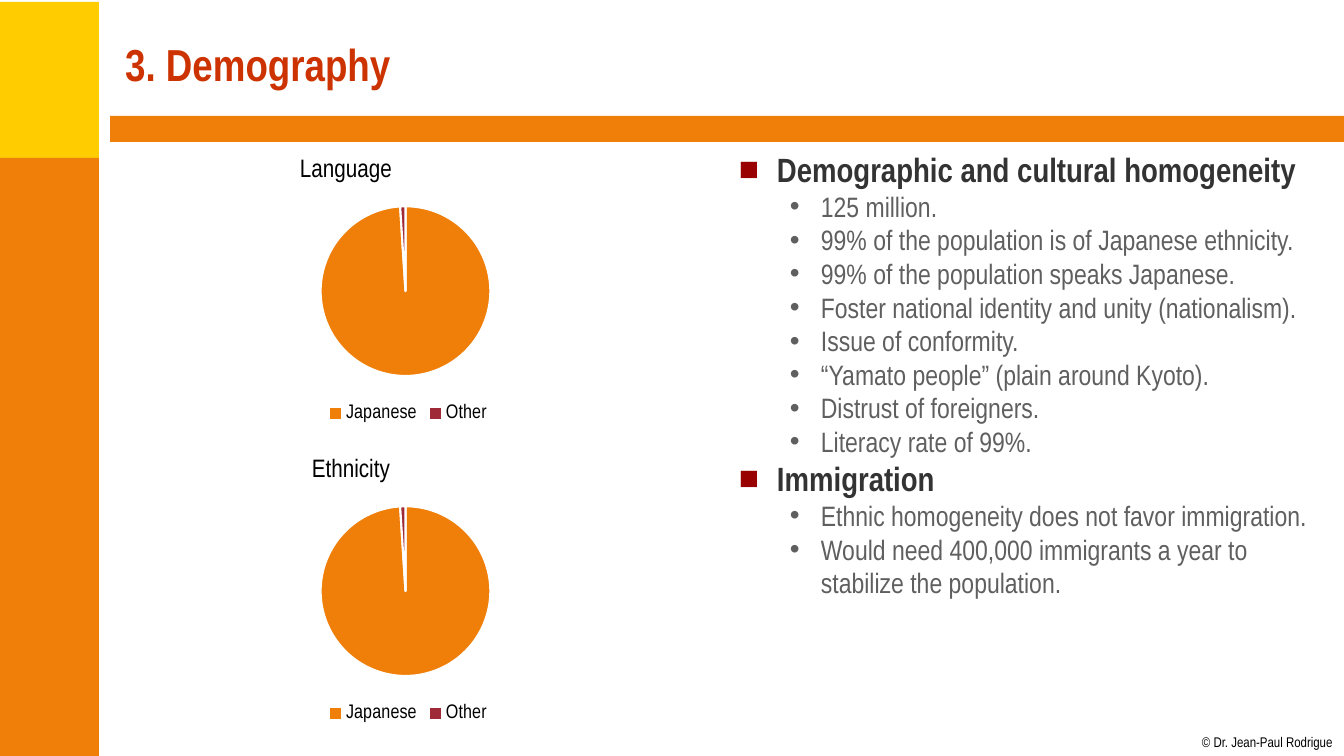
from lxml import etree
from pptx import Presentation
from pptx.chart.data import CategoryChartData
from pptx.dml.color import RGBColor
from pptx.enum.chart import XL_CHART_TYPE, XL_LEGEND_POSITION
from pptx.enum.shapes import MSO_SHAPE
from pptx.enum.text import MSO_ANCHOR, PP_ALIGN
from pptx.oxml.ns import qn
from pptx.util import Emu, Pt

PIE = XL_CHART_TYPE.PIE
LEGEND_BOTTOM = XL_LEGEND_POSITION.BOTTOM
RECTANGLE = MSO_SHAPE.RECTANGLE
MIDDLE = MSO_ANCHOR.MIDDLE
LEFT = PP_ALIGN.LEFT

EMU_PER_PX = 914400 / 100.8
FONT = "Arial Narrow"
COLORS = {
    "yellow": "FFCC00", "orange": "F07F09", "crimson": "9F2936",
    "title": "CC3300", "bullet": "990000", "heading": "333333",
    "detail": "5F5F5F", "black": "000000", "white": "FFFFFF",
}
HEADING_INDENT = (38, 38)
DETAIL_INDENT = (82, 31)

TOPICS = {
    "Demographic and cultural homogeneity": [
        "125 million.",
        "99% of the population is of Japanese ethnicity.",
        "99% of the population speaks Japanese.",
        "Foster national identity and unity (nationalism).",
        "Issue of conformity.",
        "“Yamato people” (plain around Kyoto).",
        "Distrust of foreigners.",
        "Literacy rate of 99%.",
    ],
    "Immigration": [
        "Ethnic homogeneity does not favor immigration.",
        "Would need 400,000 immigrants a year to stabilize the population.",
    ],
}


def px(length):
    return Emu(round(length * EMU_PER_PX))


def box(left, top, width, height):
    return px(left), px(top), px(width), px(height)


def rgb(name):
    return RGBColor.from_string(COLORS[name])


def style_font(font, size, color, bold=False):
    font.name = FONT
    font.size = Pt(size)
    font.bold = bold
    font.color.rgb = rgb(color)


def add_band(slide, bounds, color):
    band = slide.shapes.add_shape(RECTANGLE, *box(*bounds))
    band.shadow.inherit = False
    band.fill.solid()
    band.fill.fore_color.rgb = rgb(color)
    band.line.fill.background()


def set_title(slide, text):
    title = slide.shapes.title
    title.left, title.top, title.width, title.height = box(115, 11, 1207, 105)
    frame = title.text_frame
    frame.text = text
    frame.vertical_anchor = MIDDLE
    frame.paragraphs[0].alignment = LEFT
    style_font(frame.paragraphs[0].runs[0].font, 32, "title", True)


def add_credit(slide, text):
    frame = slide.shapes.add_textbox(*box(1202, 734, 132, 17)).text_frame
    frame.margin_left = frame.margin_right = 0
    frame.margin_top = frame.margin_bottom = 0
    frame.word_wrap = False
    frame.text = text
    style_font(frame.paragraphs[0].runs[0].font, 10, "black")


def manual_layout(**settings):
    """Build a chart layout from its settings, given in schema order."""
    layout = etree.Element(qn("c:layout"))
    manual = etree.SubElement(layout, qn("c:manualLayout"))
    for tag, value in settings.items():
        etree.SubElement(manual, qn(f"c:{tag}")).set("val", str(value))
    return layout


def add_share_pie(slide, title, title_x, top, shares):
    data = CategoryChartData()
    data.categories = ["Japanese", "Other"]
    data.add_series("Series 1", shares)
    chart = slide.shapes.add_chart(PIE, *box(111, top, 595, 283), data).chart
    style_font(chart.font, 10, "black")

    chart.has_title = True
    heading = chart.chart_title
    heading.text_frame.text = title
    style_font(heading.text_frame.paragraphs[0].runs[0].font, 18, "black")
    heading.include_in_layout = False
    title_xml = heading._element
    for old in title_xml.findall(qn("c:layout")):
        title_xml.remove(old)
    title_xml.find(qn("c:tx")).addnext(
        manual_layout(xMode="edge", yMode="edge", x=title_x, y=0.03))

    chart.has_legend = True
    chart.legend.position = LEGEND_BOTTOM
    chart.legend.include_in_layout = False
    style_font(chart.legend.font, 14, "black")

    plot_area = chart._chartSpace.chart.plotArea
    for old in plot_area.findall(qn("c:layout")):
        plot_area.remove(old)
    plot_area.insert(0, manual_layout(
        layoutTarget="inner", xMode="edge", yMode="edge",
        x=0.09, y=0.22, w=0.81, h=0.6))

    plot = chart.plots[0]
    plot.vary_by_categories = True
    for index, color in enumerate(("orange", "crimson")):
        slice_format = plot.series[0].points[index].format
        slice_format.fill.solid()
        slice_format.fill.fore_color.rgb = rgb(color)
        slice_format.line.color.rgb = rgb("white")
        slice_format.line.width = Pt(1.5)


def set_bullet(paragraph, symbol, color, indent):
    """Hang the bullet; indent is the text offset and the hanging width."""
    properties = paragraph._p.get_or_add_pPr()
    properties.set("marL", str(px(indent[0])))
    properties.set("indent", str(-px(indent[1])))
    bullet_color = etree.SubElement(properties, qn("a:buClr"))
    etree.SubElement(bullet_color, qn("a:srgbClr")).set("val", COLORS[color])
    etree.SubElement(properties, qn("a:buFont")).set("typeface", "Arial")
    etree.SubElement(properties, qn("a:buChar")).set("char", symbol)


def add_topics(slide, topics):
    frame = slide.shapes.add_textbox(*box(729, 144, 595, 584)).text_frame
    frame.word_wrap = True
    lines = []
    for heading, details in topics.items():
        lines.append((heading, True))
        lines += [(detail, False) for detail in details]
    frame.text = "\n".join(text for text, _ in lines)
    for paragraph, (_, is_heading) in zip(frame.paragraphs, lines):
        if is_heading:
            set_bullet(paragraph, "■", "bullet", HEADING_INDENT)
            style_font(paragraph.runs[0].font, 24, "heading", True)
        else:
            paragraph.level = 1
            set_bullet(paragraph, "•", "detail", DETAIL_INDENT)
            style_font(paragraph.runs[0].font, 20, "detail")


def main():
    deck = Presentation()
    deck.slide_width, deck.slide_height = px(1344), px(756)
    slide = deck.slides.add_slide(deck.slide_layouts.get_by_name("Title Only"))

    add_band(slide, (0, 2, 99, 156), "yellow")
    add_band(slide, (0, 158, 99, 598), "orange")
    add_band(slide, (110, 116, 1234, 26), "orange")
    add_credit(slide, "© Dr. Jean-Paul Rodrigue")
    set_title(slide, "3. Demography")
    add_share_pie(slide, "Language", 0.31, 144, (99, 1))
    add_share_pie(slide, "Ethnicity", 0.33, 444, (99, 1))
    add_topics(slide, TOPICS)
    deck.save("out.pptx")


if __name__ == "__main__":
    main()
